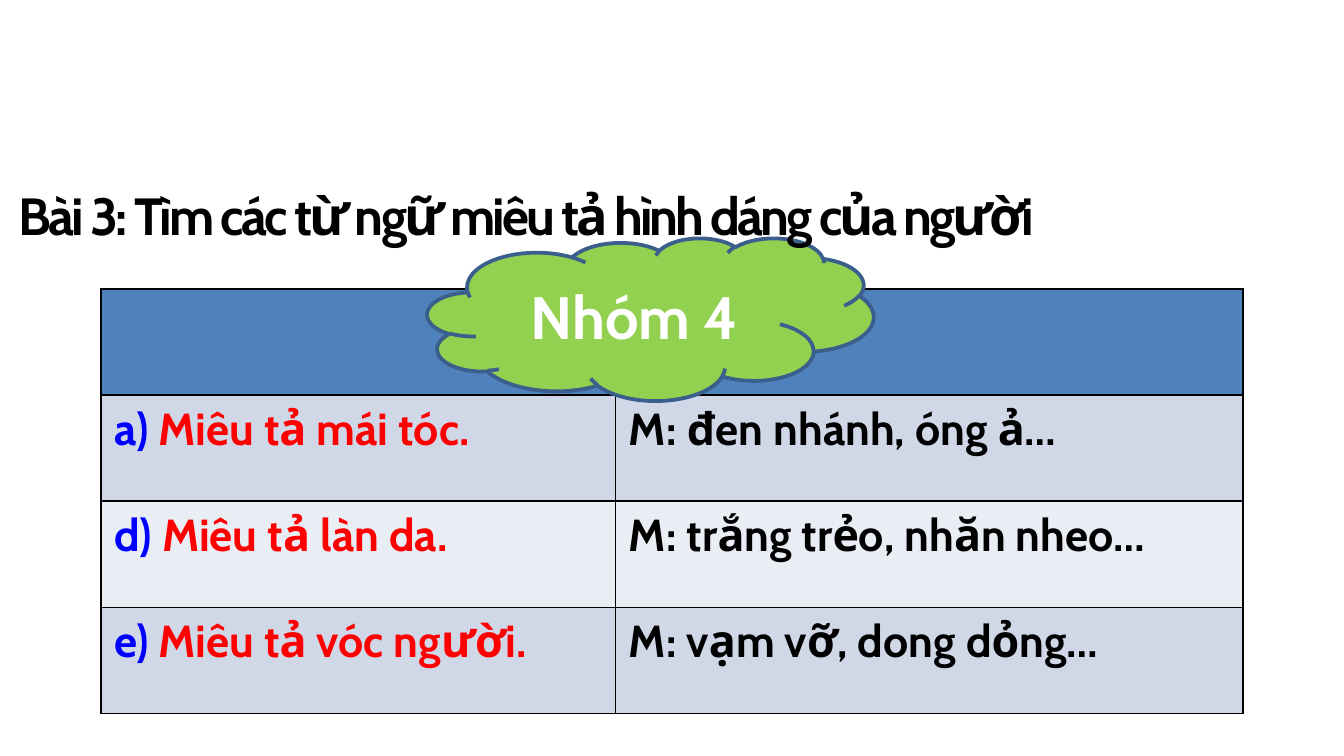
from lxml import etree
from pptx import Presentation
from pptx import util as u
from pptx.dml.color import RGBColor
from pptx.enum import shapes, text
from pptx.oxml import ns

FONT = "Cabin"
BLACK = RGBColor(0x00, 0x00, 0x00)
WHITE = RGBColor(0xFF, 0xFF, 0xFF)
BLUE = RGBColor(0x00, 0x00, 0xFF)
RED = RGBColor(0xFF, 0x00, 0x00)
HEADER = RGBColor(0x4F, 0x81, 0xBD)
BANDS = [RGBColor(0xD0, 0xD8, 0xE8), RGBColor(0xE9, 0xED, 0xF4)]
GREEN = RGBColor(0x92, 0xD0, 0x50)
OUTLINE = RGBColor(0x3A, 0x5F, 0x8C)

SLIDE_WIDTH = 10
SLIDE_HEIGHT = SLIDE_WIDTH * 9 / 16

ROWS = [
    ("a) ", "Miêu tả mái tóc.", "M: đen nhánh, óng ả…"),
    ("d)", " Miêu tả làn da.", "M: trắng trẻo, nhăn nheo…"),
    ("e)", " Miêu tả vóc người.", "M: vạm vỡ, dong dỏng…"),
]


def add_text(paragraph, content, size=24, color=BLACK, align=None, spacing=None):
    if align is not None:
        paragraph.alignment = align
    run = paragraph.add_run()
    run.text = content
    font = run.font
    font.name = FONT
    font.size = u.Pt(size)
    font.bold = True
    font.color.rgb = color
    if spacing is not None:
        run._r.get_or_add_rPr().set("spc", str(int(spacing * 100)))


def format_cell(cell, color):
    properties = cell._tc.get_or_add_tcPr()
    for side in ("lnL", "lnR", "lnT", "lnB"):
        line = etree.SubElement(properties, ns.qn(f"a:{side}"), w=str(u.Pt(1)))
        fill = etree.SubElement(line, ns.qn("a:solidFill"))
        etree.SubElement(fill, ns.qn("a:srgbClr"), val=str(BLACK))
    cell.fill.solid()
    cell.fill.fore_color.rgb = color


def add_description_table(slide, left, top, width, row_height):
    count = len(ROWS) + 1
    frame = slide.shapes.add_table(
        count, 2, u.Inches(left), u.Inches(top),
        u.Inches(width), u.Inches(row_height * count))
    table = frame.table
    first_width = 3.83
    table.columns[0].width = u.Inches(first_width)
    table.columns[1].width = u.Inches(width - first_width)
    for index, row in enumerate(table.rows):
        row.height = u.Inches(row_height)
        for cell in row.cells:
            format_cell(cell, BANDS[(index - 1) % 2] if index else HEADER)
    for index, (letter, task, example) in enumerate(ROWS, start=1):
        paragraph = table.cell(index, 0).text_frame.paragraphs[0]
        add_text(paragraph, letter, color=BLUE)
        add_text(paragraph, task, color=RED)
        add_text(table.cell(index, 1).text_frame.paragraphs[0], example)


def add_group_cloud(slide, left, top, width, height):
    cloud = slide.shapes.add_shape(
        shapes.MSO_SHAPE.CLOUD, u.Inches(left), u.Inches(top),
        u.Inches(width), u.Inches(height))
    cloud.shadow.inherit = False
    cloud.fill.solid()
    cloud.fill.fore_color.rgb = GREEN
    cloud.line.color.rgb = OUTLINE
    cloud.line.width = u.Pt(2)
    cloud.text_frame.vertical_anchor = text.MSO_ANCHOR.MIDDLE
    add_text(cloud.text_frame.paragraphs[0], "Nhóm 4", size=32, color=WHITE,
             align=text.PP_ALIGN.CENTER)


def place_title(slide, left, top, width, height):
    title = slide.shapes.title
    title.left, title.top = u.Inches(left), u.Inches(top)
    title.width, title.height = u.Inches(width), u.Inches(height)
    frame = title.text_frame
    frame.word_wrap = True
    frame.auto_size = text.MSO_AUTO_SIZE.SHAPE_TO_FIT_TEXT
    frame.vertical_anchor = text.MSO_ANCHOR.TOP
    add_text(frame.paragraphs[0], "Bài 3: Tìm các từ ngữ miêu tả hình dáng của người",
             size=28, align=text.PP_ALIGN.JUSTIFY, spacing=-1.5)
    title.element.getparent().append(title.element)


def main():
    presentation = Presentation()
    presentation.slide_width = u.Inches(SLIDE_WIDTH)
    presentation.slide_height = u.Inches(SLIDE_HEIGHT)
    slide = presentation.slides.add_slide(presentation.slide_layouts[5])
    add_description_table(slide, 0.75, 2.15, 8.5, 0.79)
    add_group_cloud(slide, 3.18, 1.77, 3.32, 1.21)
    place_title(slide, 0.04, 1.31, 9.96, 0.57)
    presentation.save("out.pptx")


if __name__ == "__main__":
    main()
